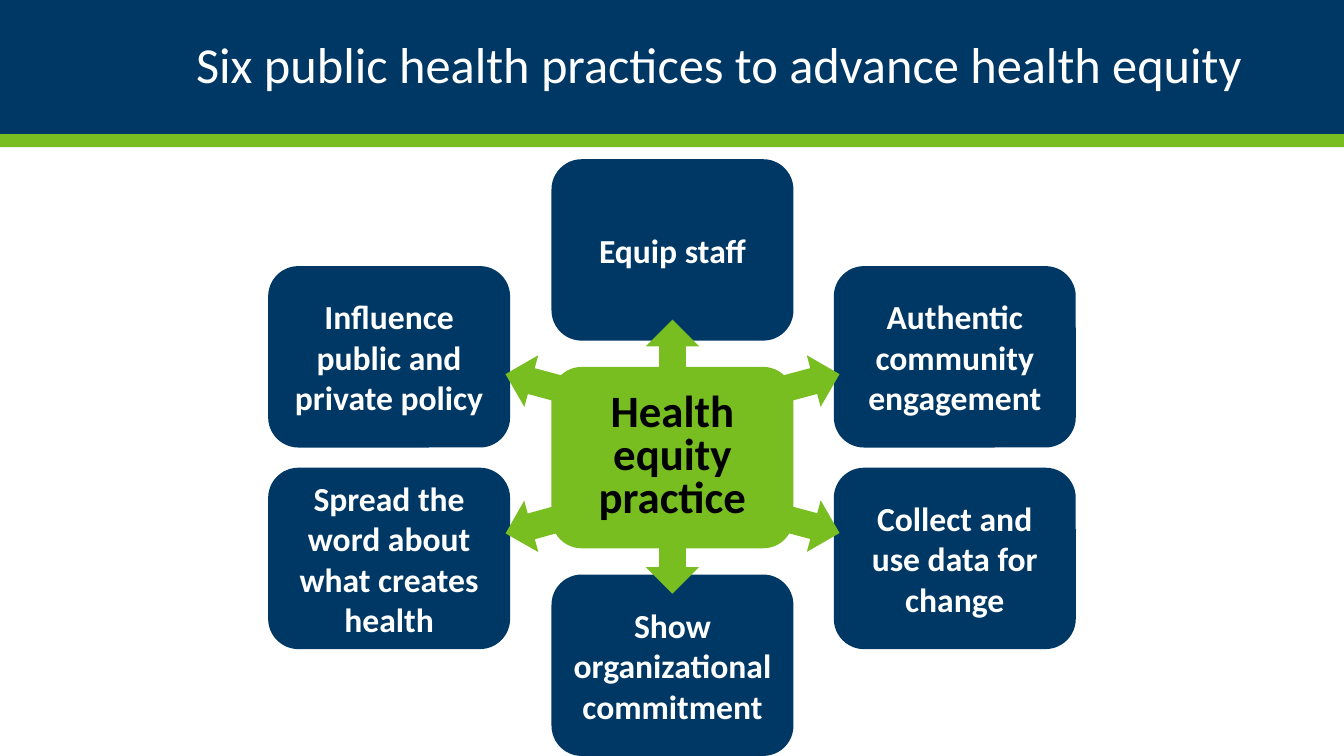
from pptx import Presentation
from pptx.dml.color import RGBColor
from pptx.enum.shapes import MSO_SHAPE as SHAPE
from pptx.enum.text import MSO_ANCHOR as ANCHOR, PP_ALIGN as ALIGN
from pptx.util import Inches, Pt

NAVY = RGBColor(0x00, 0x38, 0x65)
GREEN = RGBColor(0x78, 0xBE, 0x21)
WHITE = RGBColor(0xFF, 0xFF, 0xFF)
BLACK = RGBColor(0x00, 0x00, 0x00)
FONT = "Calibri"

SLIDE_W, SLIDE_H = 13.33, 7.5
BOX_W, BOX_H = 2.4, 1.8

# Practices: offset of the box centre from the hub centre
PRACTICES = [
    ("Influence public and private policy", -2.81, -1),
    ("Spread the word about what creates health", -2.81, 1),
    ("Equip staff", 0, -2.06),
    ("Show organizational commitment", 0, 2.06),
    ("Authentic community engagement", 2.8, -1),
    ("Collect and use data for change", 2.8, 1),
]

# Arrows: shape, width, height, offset from the hub centre, rotation
SIDE = (SHAPE.RIGHT_ARROW, 1.07, 0.53)
UPRIGHT = (SHAPE.DOWN_ARROW, 0.53, 0.62)
ARROWS = [
    (*SIDE, 1.14, 0.61, 15),
    (*SIDE, 1.14, -0.69, 345),
    (*SIDE, -1.14, 0.61, 164.6),
    (*SIDE, -1.14, -0.69, 195),
    (*UPRIGHT, 0, 1.04, 0),
    (*UPRIGHT, 0, -1.06, 180),
]


def add_filled(slide, kind, left, top, width, height, color):
    shape = slide.shapes.add_shape(
        kind, Inches(left), Inches(top), Inches(width), Inches(height))
    shape.shadow.inherit = False
    shape.fill.solid()
    shape.fill.fore_color.rgb = color
    shape.line.fill.background()
    return shape


def write(shape, text, size, color, align, bold=False, spacing=None):
    frame = shape.text_frame
    frame.word_wrap = True
    frame.vertical_anchor = ANCHOR.MIDDLE
    paragraph = frame.paragraphs[0]
    paragraph.text = text
    paragraph.alignment = align
    if spacing:
        paragraph.line_spacing = spacing
    font = paragraph.font
    font.name, font.size, font.bold = FONT, Pt(size), bold
    font.color.rgb = color


def add_header(slide, left, top, width, height):
    # Navy band with a green rule along its foot
    rule = 0.13
    band = height - rule
    add_filled(slide, SHAPE.RECTANGLE, left, top, width, band, NAVY)
    add_filled(slide, SHAPE.RECTANGLE, left, top + band, width, rule, GREEN)

    # Title
    title = slide.shapes.add_textbox(
        Inches(left + 0.92), Inches(top + 0.17), Inches(width - 1.83), Inches(1))
    write(title, "Six public health practices to advance health equity",
          36, WHITE, ALIGN.RIGHT, spacing=0.9)


def add_hub_diagram(slide, left, top, width, height):
    center_x, center_y = left + width / 2, top + height / 2

    def place(kind, dx, dy, w, h, color):
        return add_filled(slide, kind, center_x + dx - w / 2,
                          center_y + dy - h / 2, w, h, color)

    # Surrounding practices
    for text, dx, dy in PRACTICES:
        practice = place(SHAPE.ROUNDED_RECTANGLE, dx, dy, BOX_W, BOX_H, NAVY)
        write(practice, text, 24, WHITE, ALIGN.CENTER, bold=True)

    # Arrows out of the hub
    for kind, w, h, dx, dy, angle in ARROWS:
        place(kind, dx, dy, w, h, GREEN).rotation = angle

    # Hub on top
    hub = place(SHAPE.ROUNDED_RECTANGLE, 0, 0, BOX_W, BOX_H, GREEN)
    write(hub, "Health equity practice", 32, BLACK, ALIGN.CENTER,
          bold=True, spacing=0.8)


def main():
    deck = Presentation()
    deck.slide_width, deck.slide_height = Inches(SLIDE_W), Inches(SLIDE_H)
    slide = deck.slides.add_slide(deck.slide_layouts[6])
    add_header(slide, 0, 0, SLIDE_W, 1.46)
    add_hub_diagram(slide, 2.66, 1.58, 8.02, 5.92)
    deck.save("out.pptx")


if __name__ == "__main__":
    main()
